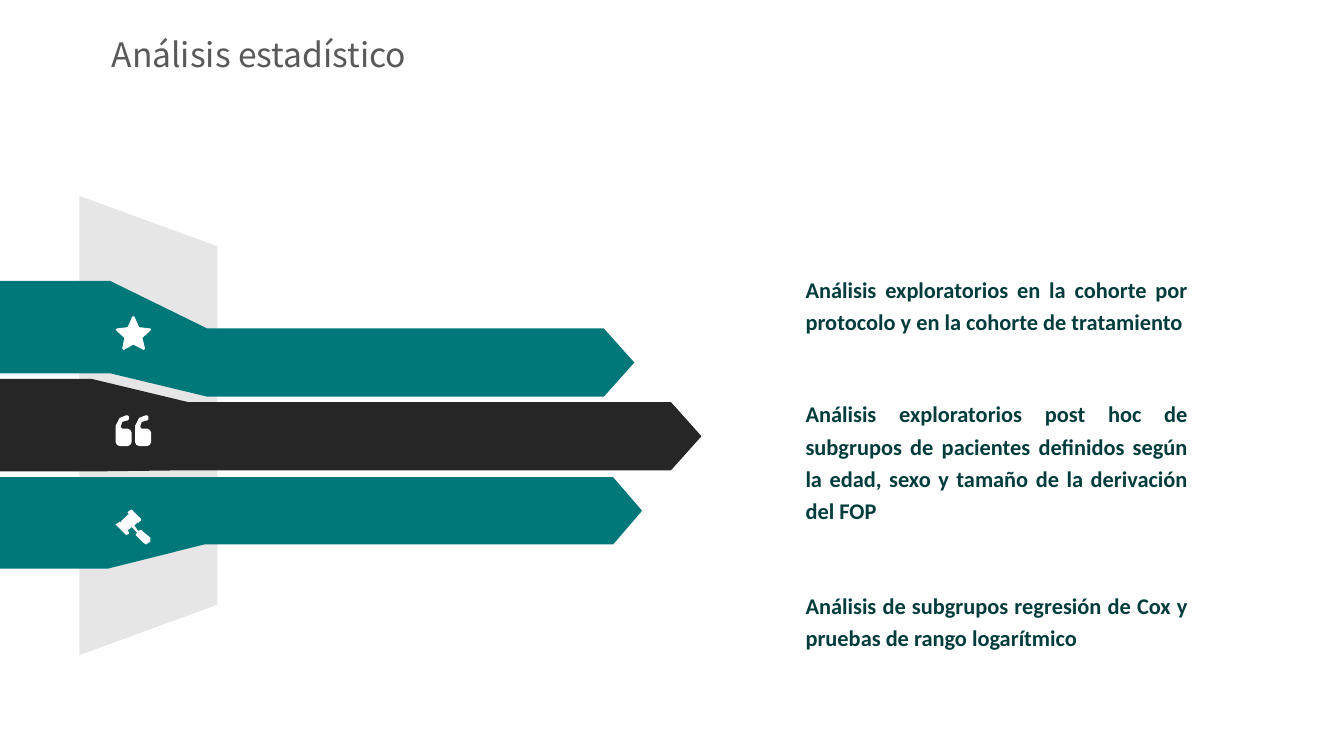
from pptx import Presentation
from pptx.util import Pt
from pptx.dml.color import RGBColor
from pptx.enum import text

TITLE = "Análisis estadístico"
TEAL, DARK, PANEL, WHITE = "007779", "262626", "E6E6E6", "FFFFFF"
INK, GREY = "003C3C", "595959"

# Backdrop outline, in points
BACKDROP = [(42.5, 105), (116.5, 132), (116.5, 324), (42.5, 351)]

# Icon outlines, in icon units
UNIT = 0.72
MARK = [(0, 20), (1, 22), (3, 23), (9, 23), (11, 22), (12, 20), (12, 13),
        (11, 11), (9, 10), (5, 10), (4, 9), (4, 8), (5, 5), (8, 4), (9, 4),
        (10, 3), (10, 1), (9, 0), (8, 0), (3, 2), (0, 8)]
QUOTE = [MARK, [(x + 14.5, y) for x, y in MARK]]
STAR = [[(26.5, 10), (20, 16), (22, 24), (21, 25), (13.3, 21), (6, 25),
         (5, 24), (6.5, 16), (0, 10), (1, 9), (9, 8), (12.5, 0), (14, 0),
         (17.5, 8), (26, 9)]]
GAVEL = [[(26, 24), (24, 25), (23, 26), (21, 25), (16, 20), (15, 19),
          (16, 17), (12, 13), (10, 15), (9, 15), (10, 17), (10, 18), (8, 19),
          (7, 18), (1, 12), (0, 11), (2, 10), (3, 9), (4, 10), (4, 9), (9, 4),
          (10, 4), (9, 2), (10, 1), (12, 0), (13, 1), (19, 7), (19, 8),
          (18, 9), (17, 10), (15, 9), (16, 10), (14, 12), (17, 16), (19, 15),
          (20, 16), (26, 21), (26, 22)]]

# Bands: x stops (start, fold start, fold end, neck, tip),
# y limits before and after the fold, colour, icon and its top
BANDS = [
    ((-10, 58, 109.5, 328.5, 344), (255.6, 304.6), (255.6, 291.7), TEAL, GAVEL, 273),
    ((-18.7, 49, 101, 359.5, 375.8), (203, 252.6), (215.5, 252), DARK, QUOTE, 222.5),
    ((-8.6, 59, 111, 323.5, 339.8), (150.5, 200), (176, 212.5), TEAL, STAR, 169.5),
]
ICON_LEFT = 61.9

# Notes: top, height, wording
NOTES = [
    (129.6, 65.5, "Análisis exploratorios en la cohorte por protocolo y en la cohorte de tratamiento"),
    (195.1, 102.2, "Análisis exploratorios post hoc de subgrupos de pacientes definidos "
                   "según la edad, sexo y tamaño de la derivación del FOP"),
    (272.9, 117.4, "Análisis de subgrupos regresión de Cox y pruebas de rango logarítmico"),
]
NOTE_LEFT, NOTE_WIDTH = 403.2, 255.6


def rgb(value):
    return RGBColor.from_string(value)


def draw(s, contours, color):
    """Draw closed contours, given in points, as one filled shape."""
    contours = [[(Pt(x), Pt(y)) for x, y in c] for c in contours]
    builder = s.shapes.build_freeform(*contours[0][0], scale=1.0)
    builder.add_line_segments(contours[0][1:], close=True)
    for c in contours[1:]:
        builder.move_to(*c[0])
        builder.add_line_segments(c[1:], close=True)
    sp = builder.convert_to_shape()
    sp.shadow.inherit = False
    sp.fill.solid()
    sp.fill.fore_color.rgb = rgb(color)
    sp.line.fill.background()


def write(sp, words, size, font, color, bold=False, align=text.PP_ALIGN.LEFT,
          spacing=1.0, insets=(0, 0, 0, 0)):
    tf = sp.text_frame
    tf.word_wrap = True
    tf.auto_size = text.MSO_AUTO_SIZE.NONE
    tf.vertical_anchor = text.MSO_ANCHOR.MIDDLE
    tf.margin_left, tf.margin_top, tf.margin_right, tf.margin_bottom = map(Pt, insets)
    p = tf.paragraphs[0]
    p.alignment, p.line_spacing = align, spacing
    r = p.add_run()
    r.text = words
    r.font.size, r.font.name, r.font.bold = Pt(size), font, bold
    r.font.color.rgb = rgb(color)


prs = Presentation()
prs.slide_width, prs.slide_height = Pt(720), Pt(405)
s = prs.slides.add_slide(prs.slide_layouts[5])

# Title
title = s.shapes.title
title.left, title.top, title.width, title.height = map(Pt, (59.8, 13.7, 167.8, 30.2))
write(title, TITLE, 18, "Noto Sans CJK SC", GREY, insets=(0, 3.6, 0, 3.6))

# Backdrop, then bands with their icons
draw(s, [BACKDROP], PANEL)
for (start, fold, flat, neck, tip), (t0, b0), (t1, b1), color, icon, top in BANDS:
    draw(s, [[(start, t0), (start, b0), (fold, b0), (flat, b1), (neck, b1),
              (tip, (t1 + b1) / 2), (neck, t1), (flat, t1), (fold, t0)]], color)
    draw(s, [[(ICON_LEFT + x * UNIT, top + y * UNIT) for x, y in c] for c in icon], WHITE)

# Notes
for top, height, words in NOTES:
    box = s.shapes.add_textbox(*map(Pt, (NOTE_LEFT, top, NOTE_WIDTH, height)))
    write(box, words, 12, "Calibri", INK, bold=True, align=text.PP_ALIGN.JUSTIFY,
          spacing=1.2, insets=(28.35, 0, 22.3, 0))

prs.save("out.pptx")
